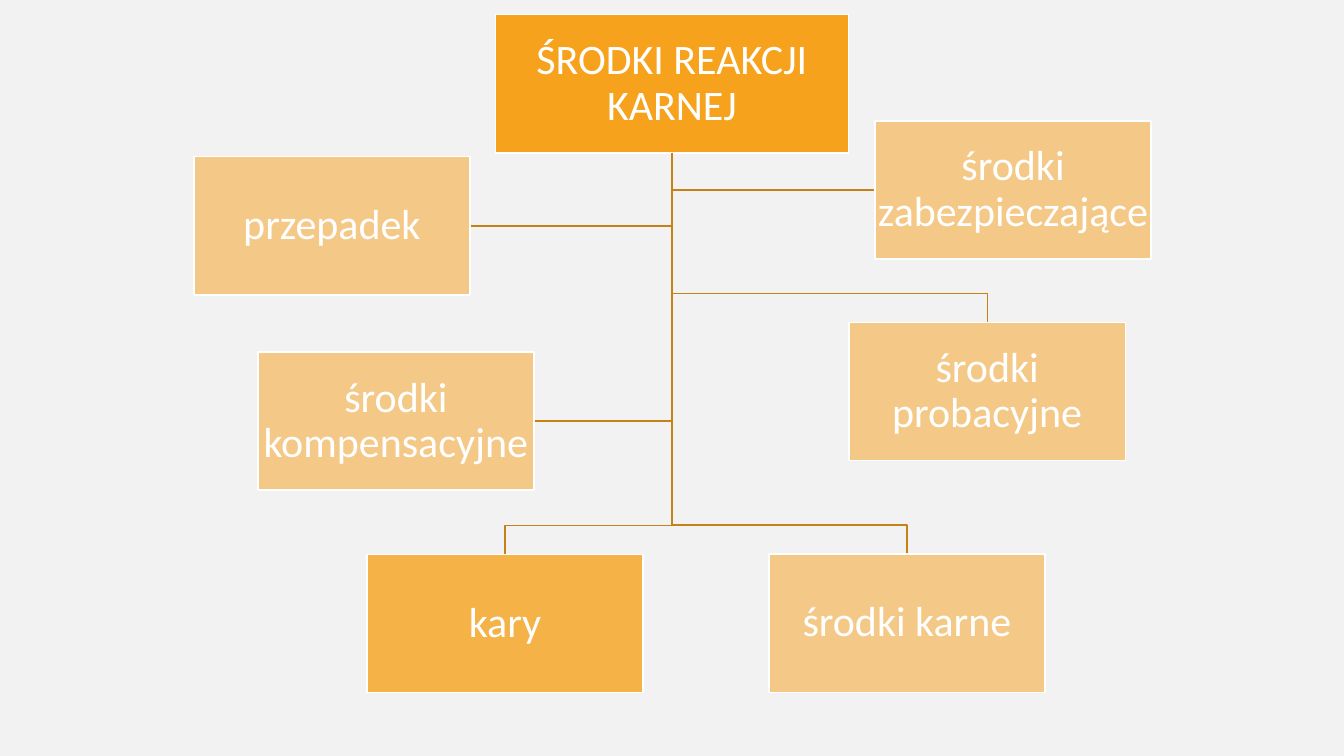
from dataclasses import dataclass

from lxml.etree import SubElement
from pptx import Presentation
from pptx.dml.color import RGBColor
from pptx.enum.shapes import MSO_SHAPE as Shape
from pptx.enum.text import MSO_ANCHOR as Anchor, MSO_AUTO_SIZE as AutoSize, PP_ALIGN as Align
from pptx.oxml.ns import qn
from pptx.util import Pt

ROOT_TEXT = "ŚRODKI REAKCJI KARNEJ"
# text, left, top, fill opacity in percent, side where the branch arrives
BRANCHES = [
    ("kary", 262.1, 396.1, 80, "top"),
    ("środki karne", 549.2, 395.8, 50, "top"),
    ("środki probacyjne", 606.5, 230.4, 50, "top"),
    ("przepadek", 138.5, 112, 50, "right"),
    ("środki zabezpieczające", 625, 86.4, 50, "left"),
    ("środki kompensacyjne", 184.2, 251.5, 50, "right"),
]


@dataclass(frozen=True)
class Theme:
    background: str = "F2F2F2"
    box: str = "F6A21D"
    branch: str = "C58217"
    white: str = "FFFFFF"
    font: str = "Calibri"
    size: float = 30
    line: float = 1


THEME = Theme()
PAGE_WIDTH, PAGE_HEIGHT = 960, 540
ROOT_WIDTH, ROOT_TOP = 252, 10.5
BOX_WIDTH, BOX_HEIGHT = 197.3, 98.7
TRUNK_X, TRUNK_TOP = PAGE_WIDTH / 2, ROOT_TOP + BOX_HEIGHT
BRANCH_DROP = 20.7
INSET = 1.5


def rgb(code):
    return RGBColor.from_string(code)


def write_text(box, text, *, size=THEME.size, color=THEME.white, align=Align.CENTER):
    frame = box.text_frame
    frame.word_wrap = True
    frame.auto_size = AutoSize.NONE
    frame.vertical_anchor = Anchor.MIDDLE
    frame.margin_left = frame.margin_right = Pt(INSET)
    frame.margin_top = frame.margin_bottom = Pt(INSET)
    para = frame.paragraphs[0]
    para.alignment = align
    para.line_spacing = 0.9
    span = para.add_run()
    span.text = text
    span.font.name = THEME.font
    span.font.size = Pt(size)
    span.font.color.rgb = rgb(color)


def paint_box(box, opacity=100):
    box.shadow.inherit = False
    box.fill.solid()
    box.fill.fore_color.rgb = rgb(THEME.box)
    if opacity < 100:
        color = box.fill._xPr.find(qn("a:solidFill"))[0]
        SubElement(color, qn("a:alpha")).set("val", str(opacity * 1000))
    box.line.color.rgb = rgb(THEME.white)
    box.line.width = Pt(THEME.line)


def branch_points(left, top, side):
    """Return the bends of a branch after it leaves the root box."""
    if side == "top":
        middle, level = left + BOX_WIDTH / 2, top - BRANCH_DROP
        return [(TRUNK_X, level), (middle, level), (middle, top)]
    level = top + BOX_HEIGHT / 2
    edge = left if side == "left" else left + BOX_WIDTH
    return [(TRUNK_X, level), (edge, level)]


def draw_branch(page, points):
    builder = page.shapes.build_freeform(Pt(TRUNK_X), Pt(TRUNK_TOP))
    builder.add_line_segments([(Pt(x), Pt(y)) for x, y in points], close=False)
    branch = builder.convert_to_shape()
    branch.shadow.inherit = False
    branch.fill.background()
    branch.line.color.rgb = rgb(THEME.branch)
    branch.line.width = Pt(THEME.line)


def main():
    deck = Presentation()
    deck.slide_width, deck.slide_height = Pt(PAGE_WIDTH), Pt(PAGE_HEIGHT)
    page = deck.slides.add_slide(deck.slide_layouts.get_by_name("Title Only"))
    page.background.fill.solid()
    page.background.fill.fore_color.rgb = rgb(THEME.background)

    for _, left, top, _, side in BRANCHES:
        draw_branch(page, branch_points(left, top, side))

    root = page.shapes.title
    root.left, root.top = Pt(TRUNK_X - ROOT_WIDTH / 2), Pt(ROOT_TOP)
    root.width, root.height = Pt(ROOT_WIDTH), Pt(BOX_HEIGHT)
    paint_box(root)
    write_text(root, ROOT_TEXT)

    for text, left, top, opacity, _ in BRANCHES:
        box = page.shapes.add_shape(
            Shape.RECTANGLE, Pt(left), Pt(top), Pt(BOX_WIDTH), Pt(BOX_HEIGHT))
        paint_box(box, opacity)
        write_text(box, text)

    deck.save("out.pptx")


if __name__ == "__main__":
    main()
